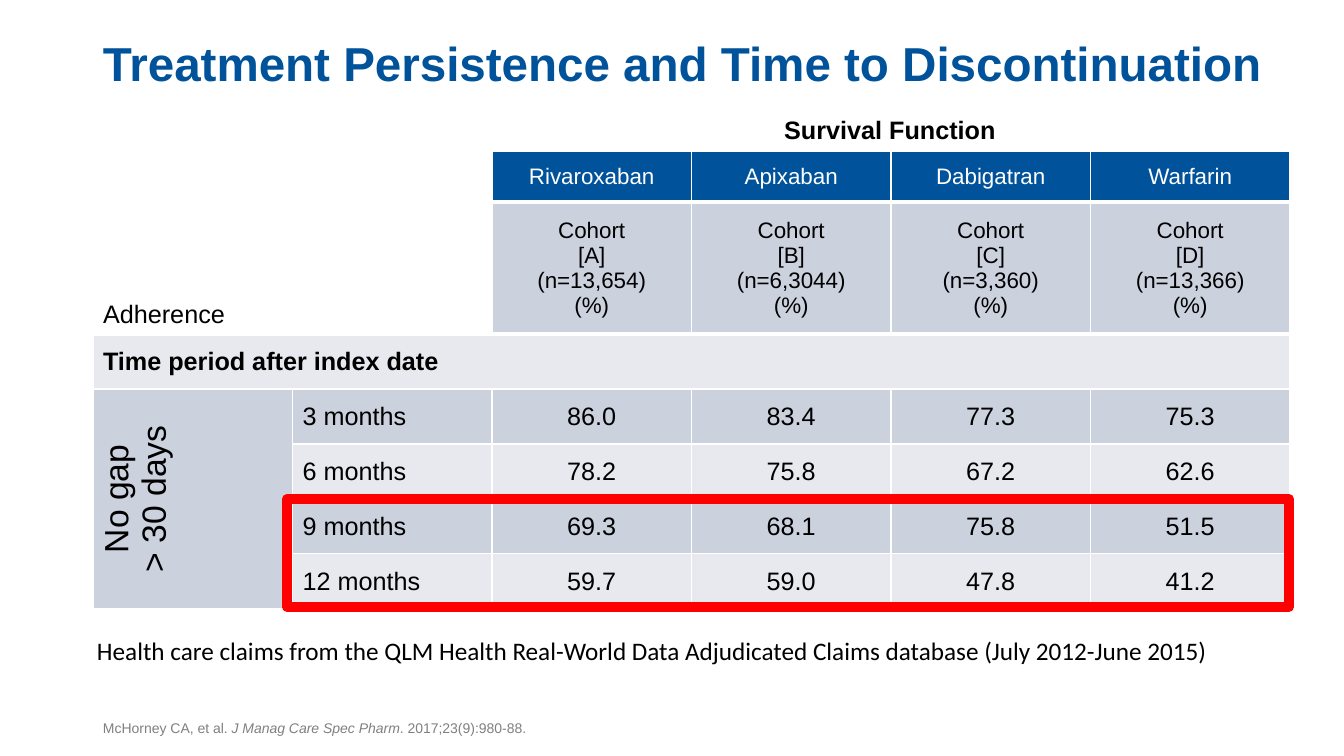
from dataclasses import dataclass

from lxml import etree
from pptx import Presentation
from pptx.dml.color import RGBColor
from pptx.enum.shapes import MSO_SHAPE
from pptx.enum.text import MSO_ANCHOR, PP_ALIGN
from pptx.oxml.ns import qn
from pptx.slide import Slide
from pptx.table import Table
from pptx.text.text import _Run
from pptx.util import Emu, Pt

RECTANGLE = MSO_SHAPE.RECTANGLE
TOP, MIDDLE, BOTTOM = MSO_ANCHOR.TOP, MSO_ANCHOR.MIDDLE, MSO_ANCHOR.BOTTOM
LEFT, CENTER = PP_ALIGN.LEFT, PP_ALIGN.CENTER

EMU_PER_PX = 914400 / 100.8
COLORS = {
    "blue": "00539B",
    "band": "CCD1DE",
    "pale": "E7E9EF",
    "white": "FFFFFF",
    "black": "000000",
    "gray": "808080",
    "red": "FF0000",
}
DRUGS = ("Rivaroxaban", "Apixaban", "Dabigatran", "Warfarin")
COHORTS = (("A", "13,654"), ("B", "6,3044"), ("C", "3,360"), ("D", "13,366"))
PERSISTENCE = (
    ("3 months", "86.0", "83.4", "77.3", "75.3"),
    ("6 months", "78.2", "75.8", "67.2", "62.6"),
    ("9 months", "69.3", "68.1", "75.8", "51.5"),
    ("12 months", "59.7", "59.0", "47.8", "41.2"),
)
COLUMN_COUNT = 6
ROW_HEIGHTS = (51, 132, 55, 55, 55, 55, 55)


@dataclass(frozen=True)
class Style:
    size: int
    color: str = "black"
    bold: bool = False
    font: str = "Arial"
    align: PP_ALIGN = LEFT
    anchor: MSO_ANCHOR = MIDDLE


@dataclass(frozen=True)
class Caption:
    box: tuple[int, int, int, int]
    phrases: tuple[str, ...]
    style: Style
    italic_phrase: int = -1
    line_spacing: float = 1.0
    margins: tuple[int, int] = (10, 5)


@dataclass(frozen=True)
class Entry:
    row: int
    column: int
    lines: tuple[str, ...]
    style: Style
    fill: str = ""
    span: tuple[int, int] = (1, 1)
    vertical: bool = False


LABEL = Style(18)
VALUE = Style(18, align=CENTER)

CAPTIONS = (
    Caption(
        (85, 629, 1204, 42),
        ("Health care claims from the QLM Health Real-World Data Adjudicated "
         "Claims database (July 2012-June 2015)",),
        Style(18, font="Calibri", anchor=TOP),
        margins=(12, 6),
    ),
    Caption(
        (93, 24, 1197, 73),
        ("Treatment Persistence and Time to Discontinuation",),
        Style(34, "blue", bold=True, anchor=BOTTOM),
        line_spacing=0.9,
    ),
    Caption(
        (93, 701, 1159, 40),
        ("McHorney CA, et al. ", "J Manag Care Spec Pharm", ". 2017;23(9):980-88."),
        Style(10, "gray", anchor=BOTTOM),
        italic_phrase=1,
    ),
    Caption(
        (491, 109, 798, 40),
        ("Survival Function",),
        Style(18, bold=True, align=CENTER, anchor=TOP),
    ),
)


def px(length: float) -> Emu:
    return Emu(round(length * EMU_PER_PX))


def rgb(name: str) -> RGBColor:
    return RGBColor.from_string(COLORS[name])


def format_run(run: _Run, style: Style, italic: bool = False) -> None:
    settings = {"name": style.font, "size": Pt(style.size), "bold": style.bold, "italic": italic}
    for attribute, value in settings.items():
        setattr(run.font, attribute, value)
    run.font.color.rgb = rgb(style.color)


def draw_caption(slide: Slide, caption: Caption) -> None:
    frame = slide.shapes.add_textbox(*map(px, caption.box)).text_frame
    side, edge = map(px, caption.margins)
    settings = {
        "word_wrap": True,
        "vertical_anchor": caption.style.anchor,
        "margin_left": side,
        "margin_right": side,
        "margin_top": edge,
        "margin_bottom": edge,
    }
    for attribute, value in settings.items():
        setattr(frame, attribute, value)
    paragraph = frame.paragraphs[0]
    paragraph.alignment = caption.style.align
    paragraph.line_spacing = caption.line_spacing
    for index, phrase in enumerate(caption.phrases):
        run = paragraph.add_run()
        run.text = phrase
        format_run(run, caption.style, index == caption.italic_phrase)


def draw_borders(table: Table) -> None:
    for row_index, row in enumerate(table.rows):
        for cell in row.cells:
            properties = cell._tc.get_or_add_tcPr()
            for side in ("L", "R", "T", "B"):
                points = 3 if row_index == 0 and side == "B" else 1
                line = etree.SubElement(properties, qn(f"a:ln{side}"), w=str(Pt(points)))
                solid = etree.SubElement(line, qn("a:solidFill"))
                etree.SubElement(solid, qn("a:srgbClr"), val=COLORS["white"])
            cell.fill.background()


def fill_entry(table: Table, entry: Entry) -> None:
    cell = table.cell(entry.row, entry.column)
    height, width = entry.span
    if entry.span != (1, 1):
        cell.merge(table.cell(entry.row + height - 1, entry.column + width - 1))
    cell.vertical_anchor = entry.style.anchor
    if entry.fill:
        cell.fill.solid()
        cell.fill.fore_color.rgb = rgb(entry.fill)
    if entry.vertical:
        cell._tc.get_or_add_tcPr().set("vert", "vert270")
    frame = cell.text_frame
    for index, line in enumerate(entry.lines):
        paragraph = frame.add_paragraph() if index else frame.paragraphs[0]
        paragraph.text = line
        paragraph.alignment = entry.style.align
        for run in paragraph.runs:
            format_run(run, entry.style)


def table_entries() -> list[Entry]:
    entries = [
        Entry(0, 0, ("Adherence",), Style(18, anchor=BOTTOM), span=(2, 2)),
        Entry(2, 0, ("Time period after index date",), Style(18, bold=True), "pale", (1, 6)),
        Entry(3, 0, ("No gap\n> 30 days",), Style(24, align=CENTER), "band", (4, 1), True),
    ]
    for column, (drug, (letter, patients)) in enumerate(zip(DRUGS, COHORTS), 2):
        cohort = ("Cohort", f"[{letter}]", f"(n={patients})", "(%)")
        entries.append(Entry(0, column, (drug,), Style(16, "white", align=CENTER), "blue"))
        entries.append(Entry(1, column, cohort, Style(16, align=CENTER), "band"))
    for row, record in enumerate(PERSISTENCE, 3):
        for column, text in enumerate(record, 1):
            style = LABEL if column == 1 else VALUE
            entries.append(Entry(row, column, (text,), style, "band" if row % 2 else "pale"))
    return entries


def draw_table(slide: Slide) -> None:
    box = (93, 151, 1197, sum(ROW_HEIGHTS))
    table = slide.shapes.add_table(len(ROW_HEIGHTS), COLUMN_COUNT, *map(px, box)).table
    table.first_row = table.horz_banding = False
    for column in table.columns:
        column.width = px(box[2] / COLUMN_COUNT)
    for row, height in zip(table.rows, ROW_HEIGHTS):
        row.height = px(height)
    draw_borders(table)
    for entry in table_entries():
        fill_entry(table, entry)


def draw_highlight(slide: Slide) -> None:
    highlight = slide.shapes.add_shape(RECTANGLE, *map(px, (287, 499, 1002, 108)))
    highlight.shadow.inherit = False
    highlight.fill.background()
    highlight.line.color.rgb = rgb("red")
    highlight.line.width = Pt(7)
    etree.SubElement(highlight.line._get_or_add_ln(), qn("a:round"))


def main() -> None:
    presentation = Presentation()
    presentation.slide_width, presentation.slide_height = px(1344), px(756)
    slide = presentation.slides.add_slide(presentation.slide_layouts[6])
    draw_table(slide)
    draw_highlight(slide)
    for caption in CAPTIONS:
        draw_caption(slide, caption)
    presentation.save("out.pptx")


if __name__ == "__main__":
    main()
